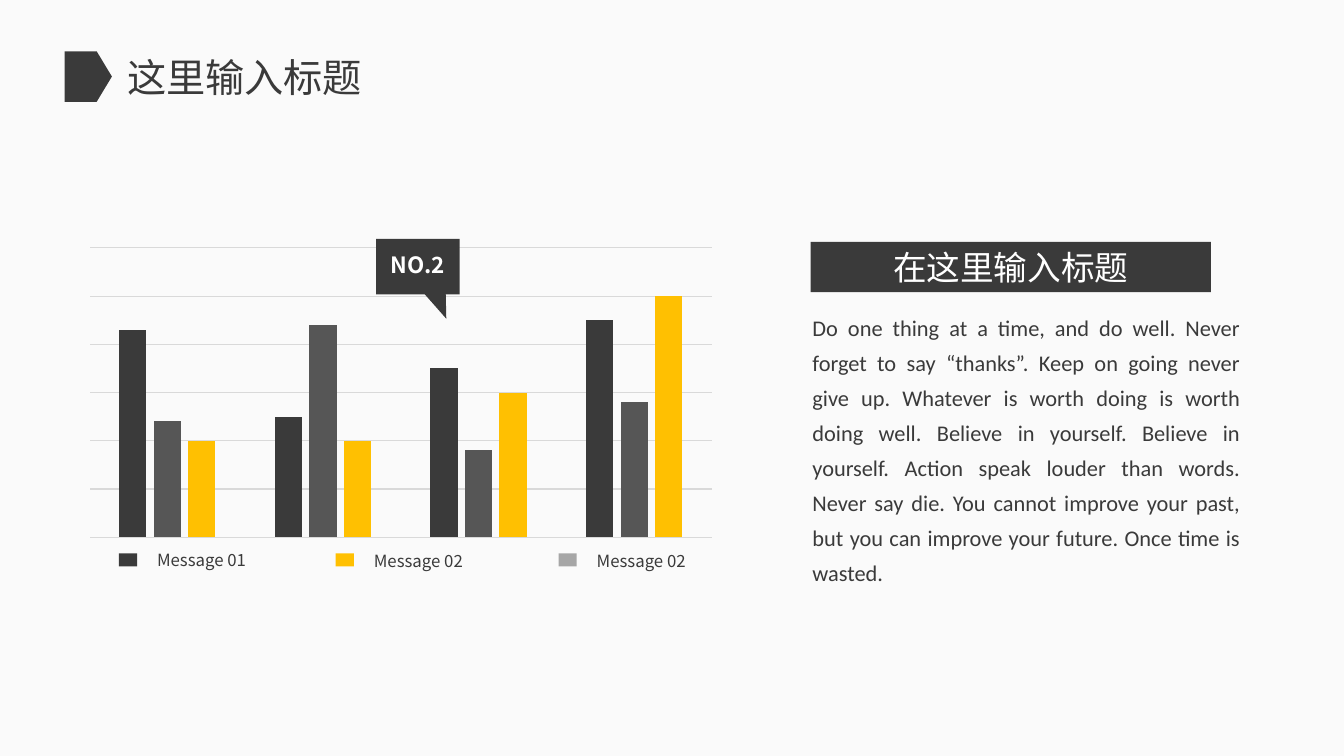
from lxml.etree import SubElement
from pptx import Presentation
from pptx.chart.data import CategoryChartData
from pptx.dml.color import RGBColor
from pptx.enum.chart import XL_CHART_TYPE as CHART
from pptx.enum.shapes import MSO_SHAPE as SHAPE
from pptx.enum.text import MSO_ANCHOR as ANCHOR, MSO_AUTO_SIZE as AUTO, PP_ALIGN as ALIGN
from pptx.oxml.ns import qn
from pptx.util import Inches, Pt

DARK, GREY, LIGHT, YELLOW = "3A3A3A", "565656", "A6A6A6", "FFC001"
CJK = "Noto Sans CJK SC"
BODY = (
    "Do one thing at a time, and do well. Never forget to say “thanks”. "
    "Keep on going never give up. Whatever is worth doing is worth doing well. "
    "Believe in yourself. Believe in yourself. Action speak louder than words. "
    "Never say die. You cannot improve your past, but you can improve your future. "
    "Once time is wasted."
)
LEGEND = [
    ("Message 01", DARK, 1.18, 2.0, 5.4),
    ("Message 02", YELLOW, 3.33, 4.15, 5.41),
    ("Message 02", LIGHT, 5.54, 6.36, 5.41),
]
SERIES = [
    ("Series 1", (86, 50, 70, 90), DARK),
    ("Series 2", (48, 88, 36, 56), GREY),
    ("Series 3", (40, 40, 60, 100), YELLOW),
]


def paint(fmt, color):
    """Give a fill a solid colour from a hex string."""
    fmt.solid()
    fmt.fore_color.rgb = RGBColor.from_string(color)


def write(sp, text, size=12, color=DARK, font=CJK, bold=False,
          align=ALIGN.CENTER, anchor=ANCHOR.TOP, spacing=None):
    """Write one formatted paragraph into a shape."""
    tf = sp.text_frame
    tf.word_wrap = True
    tf.vertical_anchor = anchor
    p = tf.paragraphs[0]
    p.alignment = align
    if spacing:
        p.line_spacing = spacing
    r = p.add_run()
    r.text = text
    r.font.size = Pt(size)
    r.font.bold = bold
    r.font.name = font
    paint(r.font.fill, color)
    SubElement(r.font._element, qn("a:ea")).set("typeface", font)
    return tf


def add_text(slide, box, text, **fmt):
    """Add a text box that grows with its text."""
    sp = slide.shapes.add_textbox(*map(Inches, box))
    write(sp, text, **fmt).auto_size = AUTO.SHAPE_TO_FIT_TEXT


def add_block(slide, kind, box, color, adjust=()):
    """Add a flat preset shape without outline."""
    sp = slide.shapes.add_shape(kind, *map(Inches, box))
    sp.shadow.inherit = False
    paint(sp.fill, color)
    sp.line.fill.background()
    for i, value in enumerate(adjust):
        sp.adjustments[i] = value
    return sp


def add_columns(slide, box):
    """Add the clustered column chart with hidden axes and light gridlines."""
    data = CategoryChartData()
    data.categories = ["1", "2", "3", "4"]
    for name, values, _ in SERIES:
        data.add_series(name, values)
    chart = slide.shapes.add_chart(CHART.COLUMN_CLUSTERED, *map(Inches, box), data).chart
    chart.has_legend = False
    chart.has_title = False
    chart.font.size = Pt(10)
    chart.font.name = CJK
    paint(chart.font.fill, "000000")
    chart.category_axis.visible = False
    axis = chart.value_axis
    axis.visible = False
    axis.minimum_scale, axis.maximum_scale, axis.major_unit = 0, 120, 20
    axis.has_major_gridlines = True
    line = axis.major_gridlines.format.line
    line.width = Pt(0.75)
    paint(line.fill, "D9D9D9")
    plot = chart.plots[0]
    plot.gap_width, plot.overlap = 219, -27
    plot.vary_by_categories = False
    for series, (_, _, color) in zip(plot.series, SERIES):
        paint(series.format.fill, color)


def add_legend(slide):
    """Add the colour swatches and their labels below the chart."""
    width = 3.97
    for label, color, left, center, top in LEGEND:
        add_text(slide, (center - width / 2, top, width, 0.3), label)
        add_block(slide, SHAPE.RECTANGLE, (left, 5.49, 0.18, 0.13), color)


def add_title(slide, text):
    """Place the slide title beside its pentagon marker."""
    add_block(slide, SHAPE.PENTAGON, (0.64, 0.51, 0.47, 0.5), DARK, [0.32])
    sp = slide.shapes.title
    sp.left, sp.top, sp.width, sp.height = map(Inches, (0.44, 0.48, 3.97, 0.57))
    write(sp, text, size=28).auto_size = AUTO.SHAPE_TO_FIT_TEXT


def main():
    """Build the slide and save it."""
    prs = Presentation()
    prs.slide_width, prs.slide_height = Inches(13.33), Inches(7.5)
    slide = prs.slides.add_slide(prs.slide_layouts[5])
    paint(slide.background.fill, "FAFAFA")
    add_columns(slide, (0.76, 2.4, 6.43, 2.99))
    add_legend(slide)
    callout = add_block(slide, SHAPE.RECTANGULAR_CALLOUT, (3.73, 2.37, 0.83, 0.55),
                        DARK, [0.34, 0.94])
    tf = write(callout, "NO.2", size=16, color="FFFFFF", bold=True, anchor=ANCHOR.MIDDLE)
    tf.margin_left = tf.margin_right = tf.margin_top = 0
    add_text(slide, (7.96, 2.99, 4.44, 2.55), BODY, size=16, font="Calibri",
             align=ALIGN.JUSTIFY, spacing=1.3)
    header = add_block(slide, SHAPE.RECTANGLE, (8.04, 2.4, 3.97, 0.5), DARK)
    write(header, "在这里输入标题", size=24, color="FFFFFF", anchor=ANCHOR.MIDDLE)
    add_title(slide, "这里输入标题")
    prs.save("out.pptx")


if __name__ == "__main__":
    main()
